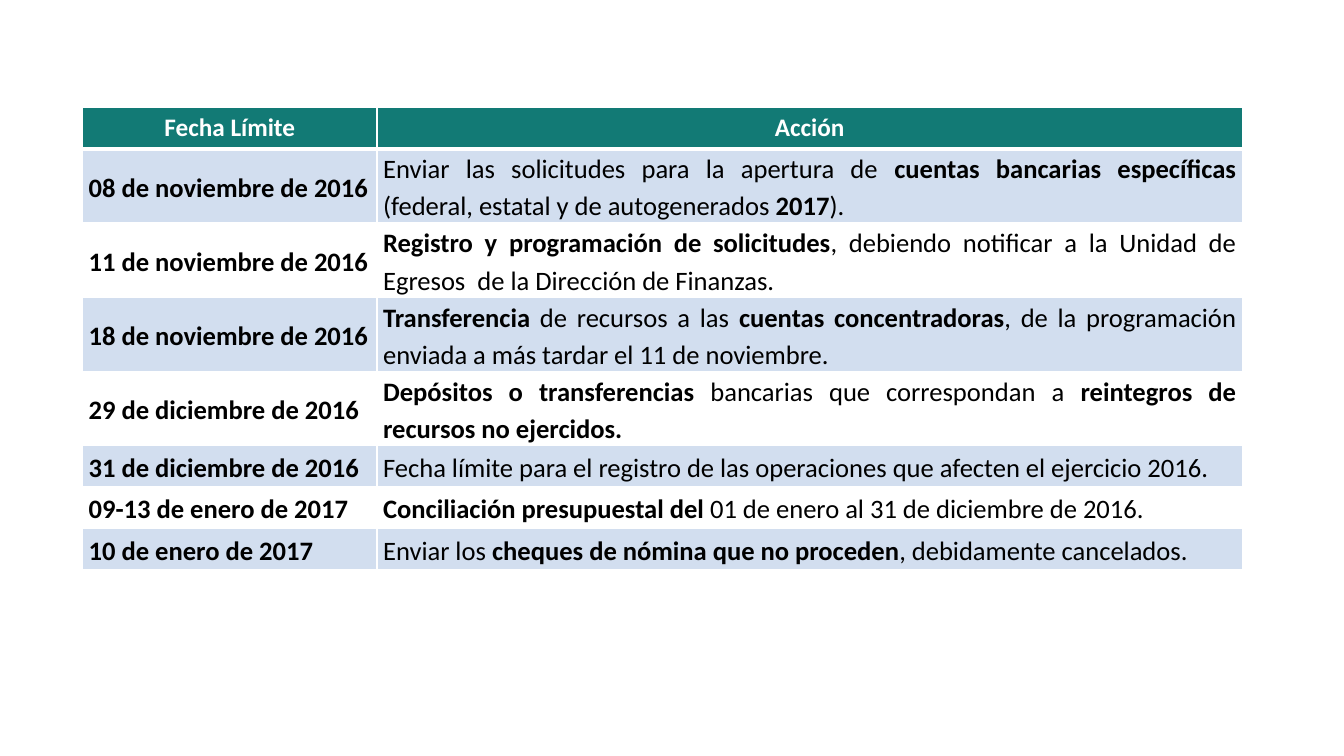
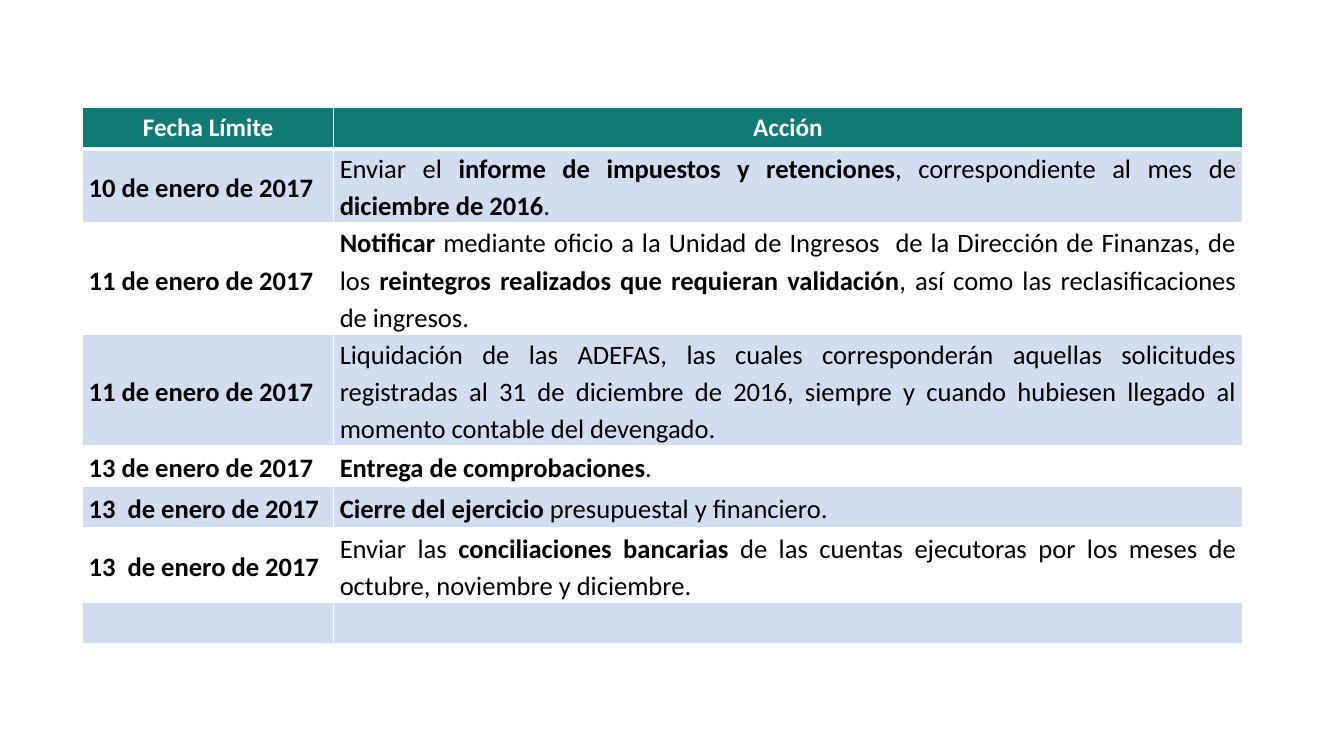
from dataclasses import dataclass

from lxml import etree
from pptx import Presentation
from pptx.dml.color import RGBColor
from pptx.enum.text import MSO_ANCHOR, PP_ALIGN
from pptx.oxml.ns import qn
from pptx.util import Inches, Pt

CENTER, LEFT, JUSTIFY = PP_ALIGN.CENTER, PP_ALIGN.LEFT, PP_ALIGN.JUSTIFY
TOP, MIDDLE = MSO_ANCHOR.TOP, MSO_ANCHOR.MIDDLE

# Shared look
FONT = "Calibri"
TEAL, BAND, WHITE, BLACK = "127A75", "D2DEEF", "FFFFFF", "000000"
TABLE_LEFT, TABLE_TOP, TABLE_WIDTH = 0.82, 1.07, 11.5
HEADER_HEIGHT = 0.4
ROW_HEIGHTS = {1: 0.41, 2: 0.73, 3: 1.1}  # by number of text lines
HEADINGS = ("Fecha Límite", "Acción")


@dataclass(frozen=True)
class Deadline:
    date: str
    action: str  # **marks** bold words
    lines: int = 1


@dataclass(frozen=True)
class Calendar:
    date_width: float
    deadlines: tuple[Deadline, ...]


@dataclass(frozen=True)
class CellStyle:
    size: float
    color: str
    align: PP_ALIGN
    anchor: MSO_ANCHOR = MIDDLE
    spacing: float = 1.15
    inset_x: float = 0.06
    inset_y: float = 0
    bottom_border: float = 1


HEADER = CellStyle(18, WHITE, CENTER, TOP, 1.0, 0.1, 0.05, 3)
DATE = CellStyle(19, BLACK, LEFT)
ACTION = CellStyle(19, BLACK, JUSTIFY)

# Contents
CALENDARS = (
    Calendar(2.92, (
        Deadline("08 de noviembre de 2016",
                 "Enviar las solicitudes para la apertura de **cuentas bancarias específicas "
                 "**(federal, estatal y de autogenerados **2017**).", 2),
        Deadline("11 de noviembre de 2016",
                 "**Registro y programación de solicitudes**, debiendo notificar a la Unidad "
                 "de Egresos  de la Dirección de Finanzas.", 2),
        Deadline("18 de noviembre de 2016",
                 "**Transferencia** de recursos a las **cuentas concentradoras**, de la "
                 "programación enviada a más tardar el 11 de noviembre.", 2),
        Deadline("29 de diciembre de 2016",
                 "**Depósitos o transferencias **bancarias que correspondan a "
                 "**reintegros de recursos no ejercidos.**", 2),
        Deadline("31 de diciembre de 2016",
                 "Fecha límite para el registro de las operaciones que afecten "
                 "el ejercicio 2016."),
        Deadline("09-13 de enero de 2017",
                 "**Conciliación presupuestal del **01 de enero al 31 de diciembre de 2016."),
        Deadline("10 de enero de 2017",
                 "Enviar los **cheques de nómina que no proceden**, debidamente cancelados."),
    )),
    Calendar(2.49, (
        Deadline("10 de enero de 2017",
                 "Enviar el **informe de impuestos y retenciones**, correspondiente al mes de "
                 "**diciembre de 2016**.", 2),
        Deadline("11 de enero de 2017",
                 "**Notificar** mediante oficio a la Unidad de Ingresos  de la Dirección de "
                 "Finanzas, de los **reintegros realizados que requieran validación**, así como "
                 "las reclasificaciones de ingresos.", 3),
        Deadline("11 de enero de 2017",
                 "Liquidación de las ADEFAS, las cuales corresponderán aquellas solicitudes "
                 "registradas al 31 de diciembre de 2016, siempre y cuando hubiesen llegado al "
                 "momento contable del devengado.", 3),
        Deadline("13 de enero de 2017", "**Entrega de comprobaciones**."),
        Deadline("13  de enero de 2017",
                 "**Cierre del ejercicio **presupuestal y financiero."),
        Deadline("13  de enero de 2017",
                 "Enviar las **conciliaciones bancarias **de las cuentas ejecutoras por los "
                 "meses de octubre, noviembre y diciembre.", 2),
        Deadline("", ""),
    )),
)


def rgb(value: str) -> RGBColor:
    return RGBColor.from_string(value)


def set_borders(cell, bottom: float) -> None:
    """Draw white borders; they precede the fill in the cell properties."""
    props = cell._tc.get_or_add_tcPr()
    for i, (side, width) in enumerate((("L", 1), ("R", 1), ("T", 1), ("B", bottom))):
        line = etree.Element(qn(f"a:ln{side}"), w=str(Pt(width)))
        fill = etree.SubElement(line, qn("a:solidFill"))
        etree.SubElement(fill, qn("a:srgbClr"), val=WHITE)
        props.insert(i, line)


def fill_cell(cell, text: str, fill: str, style: CellStyle) -> None:
    cell.fill.solid()
    cell.fill.fore_color.rgb = rgb(fill)
    set_borders(cell, style.bottom_border)
    cell.vertical_anchor = style.anchor
    cell.margin_left = cell.margin_right = Inches(style.inset_x)
    cell.margin_top = cell.margin_bottom = Inches(style.inset_y)
    p = cell.text_frame.paragraphs[0]
    p.alignment = style.align
    p.line_spacing = style.spacing
    for i, part in enumerate(text.split("**")):
        if part:
            r = p.add_run()
            r.text = part
            r.font.name = FONT
            r.font.size = Pt(style.size)
            r.font.bold = i % 2 == 1
            r.font.color.rgb = rgb(style.color)


def add_calendar(s, calendar: Calendar) -> None:
    heights = [HEADER_HEIGHT] + [ROW_HEIGHTS[d.lines] for d in calendar.deadlines]
    table = s.shapes.add_table(
        len(heights), 2, Inches(TABLE_LEFT), Inches(TABLE_TOP),
        Inches(TABLE_WIDTH), Inches(sum(heights))).table
    table.horz_banding = False
    table.columns[0].width = Inches(calendar.date_width)
    table.columns[1].width = Inches(TABLE_WIDTH - calendar.date_width)
    for row, height in zip(table.rows, heights):
        row.height = Inches(height)

    # Heading row
    for col, heading in enumerate(HEADINGS):
        fill_cell(table.cell(0, col), f"**{heading}**", TEAL, HEADER)

    # Deadlines, on alternating bands
    for row, deadline in enumerate(calendar.deadlines, start=1):
        fill = BAND if row % 2 else WHITE
        fill_cell(table.cell(row, 0), f"**{deadline.date}**", fill, DATE)
        fill_cell(table.cell(row, 1), deadline.action, fill, ACTION)


def main() -> None:
    prs = Presentation()
    prs.slide_width, prs.slide_height = Inches(13.33), Inches(7.5)
    for calendar in CALENDARS:
        add_calendar(prs.slides.add_slide(prs.slide_layouts[6]), calendar)
    prs.save("out.pptx")


if __name__ == "__main__":
    main()
